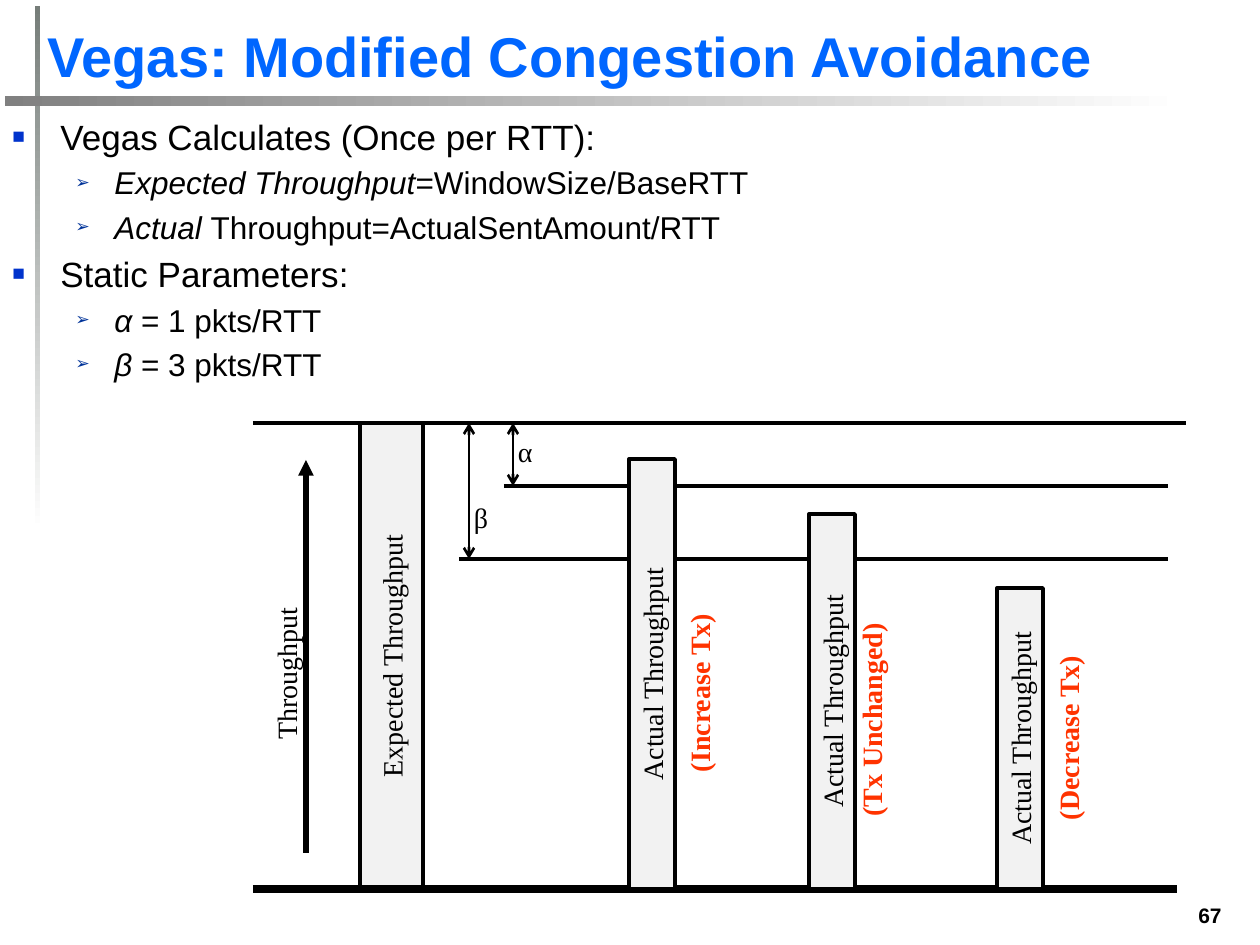
"""Build the Vegas congestion avoidance slide."""
import pptx
import pptx.dml.color
import pptx.enum.shapes
import pptx.enum.text
import pptx.oxml.ns
import pptx.util
from lxml import etree

PX = 914400 // 126
SANS, SERIF = "Arial", "Times New Roman"
COLORS = {"title": "0066FF", "text": "000000", "bar": "F2F2F2", "note": "FF3300",
          "rule": "808080", "side": "767D79", "fade": "FFFFFF"}
ALIGN = pptx.enum.text.PP_ALIGN
ANCHOR = pptx.enum.text.MSO_ANCHOR
RECT = pptx.enum.shapes.MSO_SHAPE.RECTANGLE

TITLE = "Vegas: Modified Congestion Avoidance"
BODY = [
    (0, "", "Vegas Calculates (Once per RTT):"),
    (1, "Expected Throughput", "=WindowSize/BaseRTT"),
    (1, "Actual ", "Throughput=ActualSentAmount/RTT"),
    (0, "", "Static Parameters:"),
    (1, "α", " = 1 pkts/RTT"),
    (1, "β", " = 3 pkts/RTT"),
]
LEVELS = [
    {"size": 20, "left": 48, "hang": 48, "char": "■", "color": "0033CC", "pct": 60},
    {"size": 18, "left": 102, "hang": 39, "char": "➢", "color": "003399", "pct": 55},
]
TOP, ALPHA, BETA, BASE = 423, 486, 559, 889
EXPECTED = ("Expected Throughput", 360, TOP, 63)
ACTUAL = [("Actual Throughput", 629, 459, 46), ("Actual Throughput", 809, 514, 46),
          ("Actual Throughput", 997, 588, 46)]
LEVEL_LINES = [(253, 1177, BASE, 4.5), (253, 1186, TOP, 2.25),
               (504, 1168, ALPHA, 2.25), (459, 1168, BETA, 2.25)]
GAPS = [("α", 513, ALPHA, 432), ("β", 469, BETA, 498)]
LABELS = [("Throughput", 286, 674, "text", False),
          ("(Increase Tx)", 699, 693, "note", True),
          ("(Tx Unchanged)", 871, 720, "note", True),
          ("(Decrease Tx)", 1068, 738, "note", True)]

prs = pptx.Presentation()
prs.slide_width, prs.slide_height = 1260 * PX, 945 * PX
s = prs.slides.add_slide(prs.slide_layouts[6])


def rgb(value):
    return pptx.dml.color.RGBColor.from_string(value)


def sub(parent, tag, **attrs):
    return etree.SubElement(parent, pptx.oxml.ns.qn(tag), attrs)


def box(x, y, w, h):
    return [round(v * PX) for v in (x, y, w, h)]


def style(font, size, face=SANS, color="text", bold=False):
    font.size, font.name, font.bold = pptx.util.Pt(size), face, bold
    font.color.rgb = rgb(COLORS[color])


def write(sp, text, size, face=SANS, color="text", bold=False,
          align=ALIGN.LEFT, anchor=ANCHOR.TOP, wrap=True):
    tf = sp.text_frame
    tf.text, tf.word_wrap, tf.vertical_anchor = text, wrap, anchor
    p = tf.paragraphs[0]
    p.alignment = align
    style(p.runs[0].font, size, face, color, bold)
    return tf


def fade(x, y, w, h, color, angle):
    sp = s.shapes.add_shape(RECT, *box(x, y, w, h))
    sp.shadow.inherit = False
    sp.line.fill.background()
    sp.fill.gradient()
    sp.fill.gradient_angle = angle
    for stop, name in zip(sp.fill.gradient_stops, (color, "fade")):
        stop.color.rgb = rgb(COLORS[name])


def upright(sp, text, color="text", bold=False):
    sp.rotation = 270
    write(sp, text, 16, SERIF, color, bold, ALIGN.CENTER, ANCHOR.MIDDLE, False)


def turned(cx, cy, length, depth):
    return box(cx - length / 2, cy - depth / 2, length, depth)


def bar(text, left, top, width):
    height = BASE - top
    sp = s.shapes.add_shape(RECT, *turned(left + width / 2, top + height / 2, height, width))
    sp.shadow.inherit = False
    sp.fill.solid()
    sp.fill.fore_color.rgb = rgb(COLORS["bar"])
    sp.line.color.rgb = rgb(COLORS["text"])
    sp.line.width = pptx.util.Pt(2.25)
    upright(sp, text)


def line(x1, y1, x2, y2, width, head=None, tail=None):
    c = s.shapes.add_connector(pptx.enum.shapes.MSO_CONNECTOR.STRAIGHT, *box(x1, y1, x2, y2))
    c.line.color.rgb = rgb(COLORS["text"])
    c.line.width = pptx.util.Pt(width)
    ln = c.line._get_or_add_ln()
    for tag, kind in (("a:headEnd", head), ("a:tailEnd", tail)):
        if kind:
            sub(ln, tag, type=kind)
    sub(c._element.spPr, "a:effectLst")


def body():
    tf = s.shapes.add_textbox(*box(0, 109, 1134, 290)).text_frame
    tf.word_wrap = True
    for i, (level, lead, rest) in enumerate(BODY):
        p = tf.paragraphs[0] if i == 0 else tf.add_paragraph()
        look = LEVELS[level]
        p.level = level
        if i:
            p.space_before = pptx.util.Pt(look["size"] * 0.2)
        pPr = p._p.get_or_add_pPr()
        pPr.set("marL", str(look["left"] * PX))
        pPr.set("indent", str(-look["hang"] * PX))
        sub(sub(pPr, "a:buClr"), "a:srgbClr", val=look["color"])
        sub(pPr, "a:buSzPct", val=str(look["pct"] * 1000))
        sub(pPr, "a:buFont", typeface=SANS)
        sub(pPr, "a:buChar", char=look["char"])
        for text, italic in ((lead, True), (rest, False)):
            if text:
                r = p.add_run()
                r.text = text
                style(r.font, look["size"])
                r.font.italic = italic


def chart():
    bar(*EXPECTED)
    for x1, x2, y, width in LEVEL_LINES:
        line(x1, y, x2, y, width)
    for name, x, bottom, label_top in GAPS:
        line(x, TOP, x, bottom, 1.5, "arrow", "arrow")
        tf = write(s.shapes.add_textbox(*box(x + 5, label_top + 3, 26, 34)), name, 16, SERIF)
        tf.margin_left = tf.margin_right = tf.margin_top = tf.margin_bottom = 0
    line(306, 853, 306, 460, 3, tail="triangle")
    for item in ACTUAL:
        bar(*item)
    for text, cx, cy, color, bold in LABELS:
        upright(s.shapes.add_textbox(*turned(cx, cy, 228, 63)), text, color, bold)


fade(35, 6, 5, 525, "side", 270)
fade(5, 96, 1181, 10, "rule", 0)
write(s.shapes.add_textbox(*box(35, 14, 1099, 81)), TITLE, 32, color="title",
      bold=True, anchor=ANCHOR.BOTTOM)
body()
chart()
write(s.shapes.add_textbox(*box(1155, 896, 79, 38)), "67", 12, bold=True, align=ALIGN.RIGHT)
prs.save("out.pptx")
